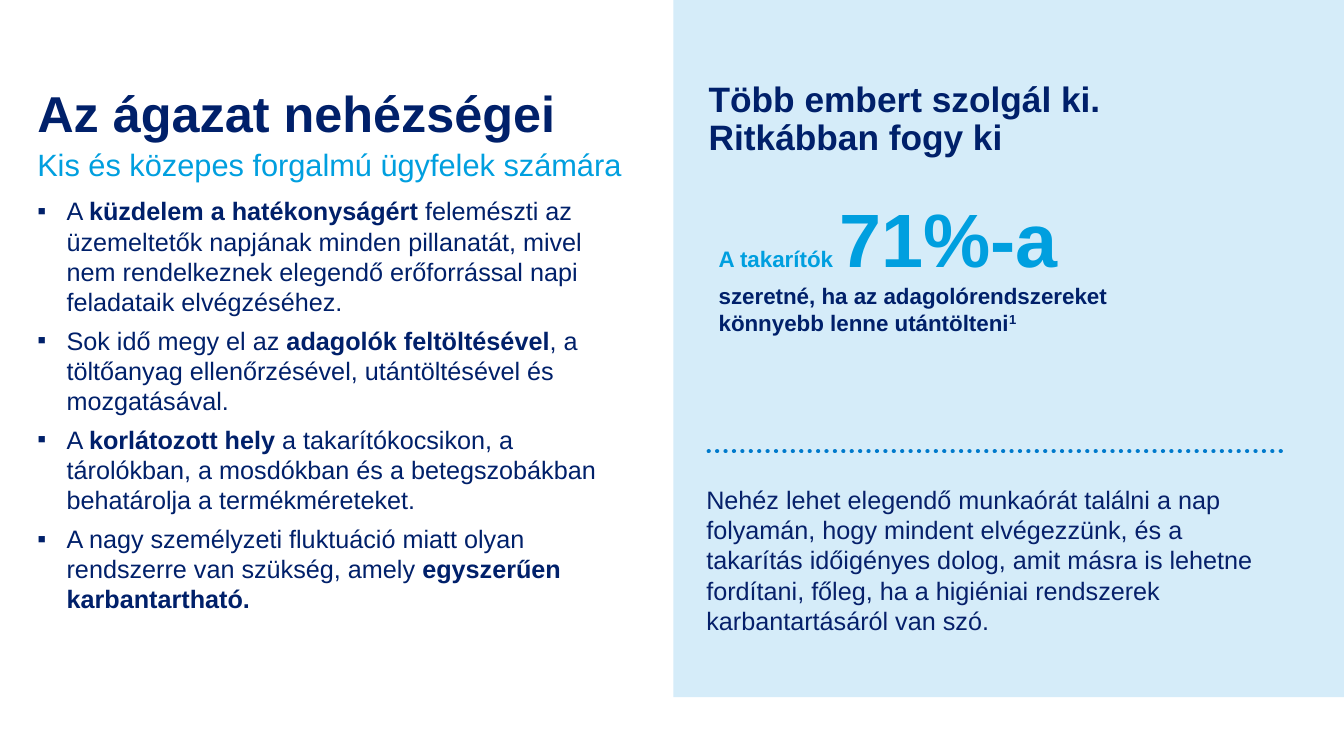
from dataclasses import dataclass
from typing import Any

import pptx
import pptx.dml.color
import pptx.enum.dml
import pptx.enum.shapes
import pptx.enum.text
import pptx.oxml
import pptx.oxml.ns
import pptx.util
from lxml import etree

Cm = pptx.util.Cm
Pt = pptx.util.Pt
RGBColor = pptx.dml.color.RGBColor
Anchor = pptx.enum.text.MSO_ANCHOR

NAVY = RGBColor(0x00, 0x20, 0x6A)
BODY_NAVY = RGBColor(0x06, 0x20, 0x6A)
CYAN = RGBColor(0x00, 0x9F, 0xDF)
DOT_BLUE = RGBColor(0x00, 0x7A, 0xCC)
PALE_BLUE = RGBColor(0xD5, 0xEC, 0xF9)
LEFT_MARGIN = 0.94
RIGHT_MARGIN = 17.86
LINE_BREAK = "\n"


@dataclass(frozen=True)
class Run:
    text: str
    size: float
    color: RGBColor = NAVY
    bold: bool = False
    superscript: bool = False


@dataclass(frozen=True)
class TextBlock:
    left: float
    top: float
    width: float
    height: float
    paragraphs: list[list[Run]]
    anchor: Any = Anchor.TOP
    inset: tuple[float, float] = (0, 0)
    line_spacing: float = 1.0
    space_after: float = 0
    bulleted: bool = False


def bullet_runs(before: str, emphasis: str, after: str = "") -> list[Run]:
    runs = [Run(before, 18), Run(emphasis, 18, bold=True)]
    return runs + [Run(after, 18)] if after else runs


TITLE = TextBlock(LEFT_MARGIN, 0.64, 15.6, 2.97,
                  [[Run("Az ágazat nehézségei", 36, bold=True)]],
                  anchor=Anchor.BOTTOM, line_spacing=0.9)

TEXT_BLOCKS = [
    TextBlock(LEFT_MARGIN, 3.68, 15.6, 1.09,
              [[Run("Kis és közepes forgalmú ügyfelek számára", 22, CYAN)]]),
    TextBlock(LEFT_MARGIN, 4.93, 14.27, 12.65, [
        bullet_runs("A ", "küzdelem a hatékonyságért",
                    " felemészti az üzemeltetők napjának minden pillanatát, mivel nem "
                    "rendelkeznek elegendő erőforrással napi feladataik elvégzéséhez."),
        bullet_runs("Sok idő megy el az ", "adagolók feltöltésével",
                    ", a töltőanyag ellenőrzésével, utántöltésével és mozgatásával."),
        bullet_runs("A ", "korlátozott hely",
                    " a takarítókocsikon, a tárolókban, a mosdókban és a "
                    "betegszobákban behatárolja a termékméreteket."),
        bullet_runs("A nagy személyzeti fluktuáció miatt olyan rendszerre van szükség, amely ",
                    "egyszerűen karbantartható."),
    ], space_after=6, bulleted=True),
    TextBlock(RIGHT_MARGIN, 4.7, 11, 4.32, [
        [Run("A takarítók ", 16, CYAN, True), Run("71%-a", 54, CYAN, True)],
        [Run("szeretné, ha az adagolórendszereket könnyebb lenne utántölteni", 16, bold=True),
         Run("1", 16, bold=True, superscript=True)],
    ], inset=(0.25, 0.13)),
    TextBlock(17.55, 12.07, 14.78, 3.84, [[
        Run("Nehéz lehet elegendő munkaórát találni a nap folyamán, hogy mindent "
            "elvégezzünk, és a takarítás időigényes dolog, amit másra is lehetne "
            "fordítani, főleg, ha a higiéniai rendszerek karbantartásáról van szó.",
            18, BODY_NAVY)]], inset=(0.25, 0.13)),
    TextBlock(RIGHT_MARGIN, 1.6, 10.44, 2.39, [[
        Run("Több embert szolgál ki.", 25.2, bold=True),
        Run(LINE_BREAK, 25.2),
        Run("Ritkábban fogy ki", 25.2, bold=True)]],
        anchor=Anchor.BOTTOM, line_spacing=0.9),
]


def set_attributes(target: Any, values: dict[str, Any]) -> None:
    for name, value in values.items():
        setattr(target, name, value)


def add_bullet(paragraph: Any) -> None:
    properties = paragraph._p.get_or_add_pPr()
    properties.set("marL", str(Cm(0.74)))
    properties.set("indent", str(-Cm(0.74)))
    for tag, attribute, value in (("a:buFont", "typeface", "Arial"), ("a:buChar", "char", "▪")):
        etree.SubElement(properties, pptx.oxml.ns.qn(tag)).set(attribute, value)


def add_run(paragraph: Any, item: Run) -> None:
    if item.text == LINE_BREAK:
        paragraph.add_line_break()
        return
    run = paragraph.add_run()
    run.text = item.text
    set_attributes(run.font, {"name": "Arial", "size": Pt(item.size), "bold": item.bold})
    run.font.color.rgb = item.color
    if item.superscript:
        run._r.get_or_add_rPr().set("baseline", "30000")


def fill_text(shape: Any, block: TextBlock) -> None:
    set_attributes(shape, {"left": Cm(block.left), "top": Cm(block.top),
                           "width": Cm(block.width), "height": Cm(block.height)})
    horizontal, vertical = (Cm(value) for value in block.inset)
    frame = shape.text_frame
    set_attributes(frame, {
        "word_wrap": True,
        "auto_size": pptx.enum.text.MSO_AUTO_SIZE.NONE,
        "vertical_anchor": block.anchor,
        "margin_left": horizontal, "margin_right": horizontal,
        "margin_top": vertical, "margin_bottom": vertical,
    })
    for index, runs in enumerate(block.paragraphs):
        paragraph = frame.add_paragraph() if index else frame.paragraphs[0]
        if block.bulleted:
            add_bullet(paragraph)
        set_attributes(paragraph, {
            "alignment": pptx.enum.text.PP_ALIGN.LEFT,
            "line_spacing": block.line_spacing,
            "space_before": Pt(0),
            "space_after": Pt(block.space_after),
        })
        for item in runs:
            add_run(paragraph, item)


def add_panel(slide: Any) -> None:
    panel = slide.shapes.add_shape(pptx.enum.shapes.MSO_SHAPE.RECTANGLE,
                                   Cm(16.97), Cm(0), Cm(16.9), Cm(17.57))
    panel.shadow.inherit = False
    panel.fill.solid()
    panel.fill.fore_color.rgb = PALE_BLUE
    panel.line.fill.background()


def add_divider(slide: Any) -> None:
    divider = slide.shapes.add_connector(pptx.enum.shapes.MSO_CONNECTOR.STRAIGHT,
                                         Cm(RIGHT_MARGIN), Cm(11.37), Cm(32.36), Cm(11.37))
    set_attributes(divider.line, {"width": Pt(3),
                                  "dash_style": pptx.enum.dml.MSO_LINE.ROUND_DOT})
    divider.line.color.rgb = DOT_BLUE
    divider.line._get_or_add_ln().set("cap", "rnd")
    etree.SubElement(divider._element.spPr, pptx.oxml.ns.qn("a:effectLst"))


def main() -> None:
    presentation = pptx.Presentation()
    set_attributes(presentation, {"slide_width": Cm(33.87), "slide_height": Cm(19.05)})
    slide = presentation.slides.add_slide(presentation.slide_layouts[5])
    fill_text(slide.shapes.title, TITLE)
    add_panel(slide)
    for block in TEXT_BLOCKS:
        fill_text(slide.shapes.add_textbox(0, 0, 0, 0), block)
    add_divider(slide)
    presentation.save("out.pptx")


if __name__ == "__main__":
    main()
